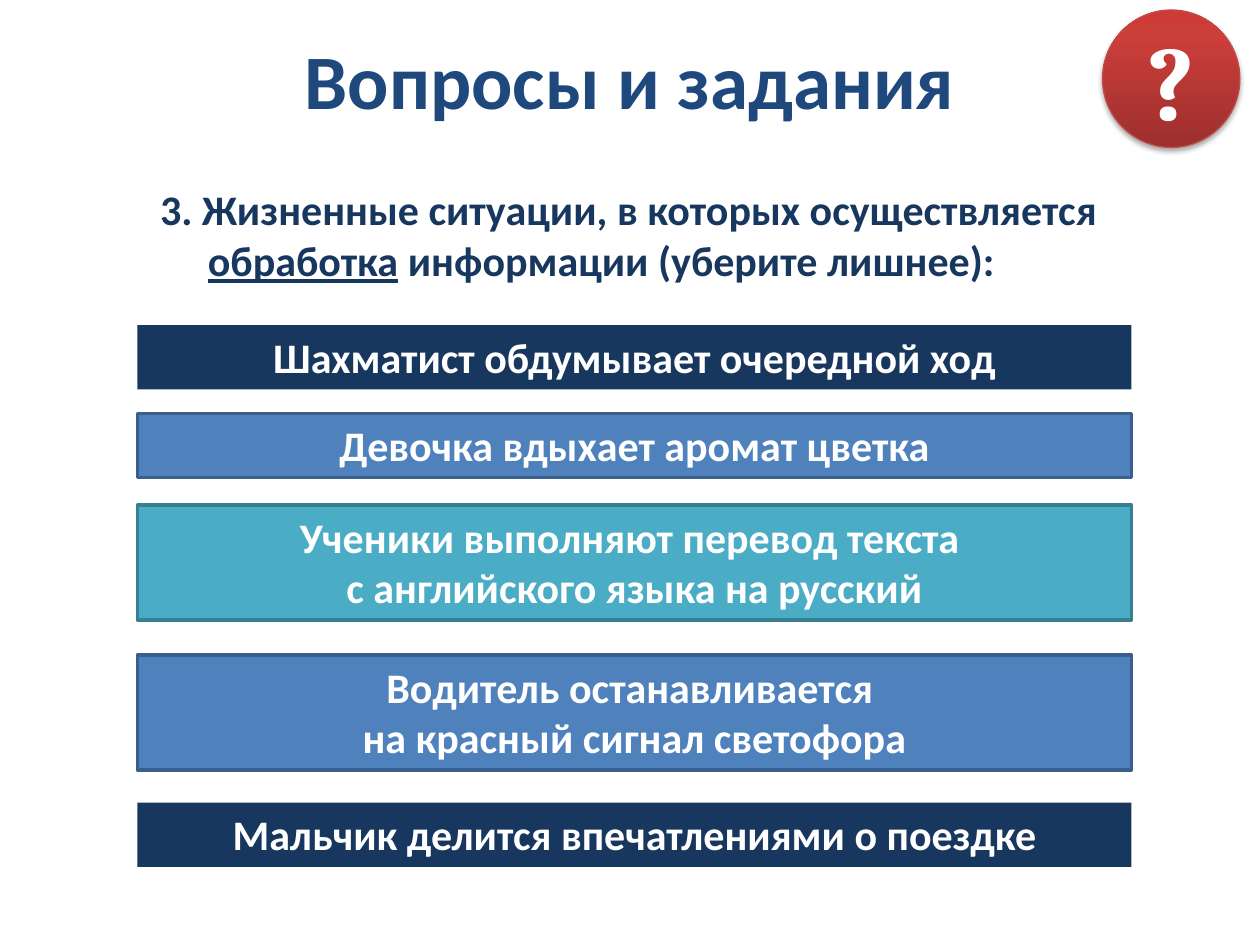
from copy import deepcopy

from lxml.etree import SubElement
from pptx import Presentation
from pptx.dml.color import RGBColor
from pptx.enum.shapes import MSO_SHAPE as Preset
from pptx.enum.text import MSO_ANCHOR as Anchor, MSO_AUTO_SIZE as AutoSize, PP_ALIGN as Align
from pptx.oxml.ns import qn
from pptx.util import Inches, Pt

WHITE = RGBColor(0xFF, 0xFF, 0xFF)
NAVY = RGBColor(0x17, 0x37, 0x5E)
TITLE_BLUE = RGBColor(0x1F, 0x49, 0x7D)
BLUE = RGBColor(0x4F, 0x81, 0xBD)
BLUE_EDGE = RGBColor(0x3A, 0x5F, 0x8C)
TEAL = RGBColor(0x4B, 0xAC, 0xC6)
TEAL_EDGE = RGBColor(0x37, 0x7F, 0x92)
RED_EDGE = RGBColor(0xBF, 0x4C, 0x48)
RED_STOPS = (
    (0, RGBColor(0x9C, 0x2F, 0x2D)),
    (0.8, RGBColor(0xCB, 0x3E, 0x3A)),
    (1, RGBColor(0xCE, 0x3B, 0x37)),
)

ANSWERS = (
    (2.58, 0.51, NAVY, None, "Шахматист обдумывает очередной ход"),
    (3.28, 0.51, BLUE, BLUE_EDGE, "Девочка вдыхает аромат цветка"),
    (4.01, 0.91, TEAL, TEAL_EDGE, "Ученики выполняют перевод текста \nс английского языка на русский"),
    (5.2, 0.91, BLUE, BLUE_EDGE, "Водитель останавливается \nна красный сигнал светофора"),
    (6.37, 0.51, NAVY, None, "Мальчик делится впечатлениями о поездке"),
)


def write(paragraph, text, size=24, font="Calibri", color=WHITE, align=Align.CENTER, underline=None):
    paragraph.alignment = align
    for index, line in enumerate(text.split("\n")):
        if index:
            paragraph.add_line_break()
        run = paragraph.add_run()
        run.text = line
        run.font.size = Pt(size)
        run.font.name = font
        run.font.bold = True
        run.font.color.rgb = color
        run.font.underline = underline


def place(placeholder, left, top, width, height):
    placeholder.left, placeholder.top = Inches(left), Inches(top)
    placeholder.width, placeholder.height = Inches(width), Inches(height)


def fill_title(title):
    place(title, 0.5, 0, 9, 1.25)
    title.text_frame.vertical_anchor = Anchor.MIDDLE
    write(title.text_frame.paragraphs[0], "Вопросы и задания", size=44, color=TITLE_BLUE)


def fill_question(question):
    place(question, 1.17, 1.41, 8.45, 0.94)
    paragraph = question.text_frame.paragraphs[0]
    properties = paragraph._p.get_or_add_pPr()
    properties.set("marL", str(Inches(0.38)))
    properties.set("indent", str(-Inches(0.38)))
    SubElement(properties, qn("a:buNone"))
    paragraph.space_before = Pt(0)
    for text, underline in (
        ("3. Жизненные ситуации, в которых осуществляется ", None),
        ("обработка", True),
        (" информации (уберите лишнее):", None),
    ):
        write(paragraph, text, color=NAVY, align=Align.LEFT, underline=underline)


def add_answer(slide, top, height, color, edge, text):
    answer = slide.shapes.add_shape(
        Preset.RECTANGLE, Inches(1.09), Inches(top), Inches(7.89), Inches(height))
    answer.shadow.inherit = False
    answer.fill.solid()
    answer.fill.fore_color.rgb = color
    if edge is None:
        answer.line.fill.background()
    else:
        answer.line.color.rgb = edge
        answer.line.width = Pt(2)
    frame = answer.text_frame
    frame.word_wrap = True
    frame.auto_size = AutoSize.SHAPE_TO_FIT_TEXT
    frame.vertical_anchor = Anchor.TOP
    write(frame.paragraphs[0], text)


def add_red_gradient(badge):
    badge.fill.gradient()
    badge.fill.gradient_angle = 90
    stop_list = badge._element.spPr.find(".//" + qn("a:gsLst"))
    stop_list.append(deepcopy(stop_list[-1]))
    for stop, (position, color) in zip(badge.fill.gradient_stops, RED_STOPS):
        stop.position = position
        stop.color.rgb = color


def add_soft_shadow(badge):
    badge.shadow.inherit = False
    effects = badge._element.spPr.find(qn("a:effectLst"))
    shadow = SubElement(effects, qn("a:outerShdw"), blurRad=str(Pt(3.1)), dist=str(Pt(1.8)),
                        dir="5400000", rotWithShape="0")
    color = SubElement(shadow, qn("a:srgbClr"), val="000000")
    SubElement(color, qn("a:alpha"), val="35000")


def add_question_badge(slide):
    badge = slide.shapes.add_shape(
        Preset.OVAL, Inches(8.75), Inches(0.08), Inches(1.09), Inches(1.09))
    add_red_gradient(badge)
    badge.line.color.rgb = RED_EDGE
    badge.line.width = Pt(0.75)
    add_soft_shadow(badge)
    badge.text_frame.vertical_anchor = Anchor.MIDDLE
    write(badge.text_frame.paragraphs[0], "?", size=60, font="Cambria")


def main():
    deck = Presentation()
    deck.slide_width, deck.slide_height = Inches(10), Inches(7.5)
    slide = deck.slides.add_slide(deck.slide_layouts[1])
    fill_title(slide.shapes.title)
    fill_question(slide.placeholders[1])
    add_question_badge(slide)
    for answer in ANSWERS:
        add_answer(slide, *answer)
    deck.save("out.pptx")


if __name__ == "__main__":
    main()
